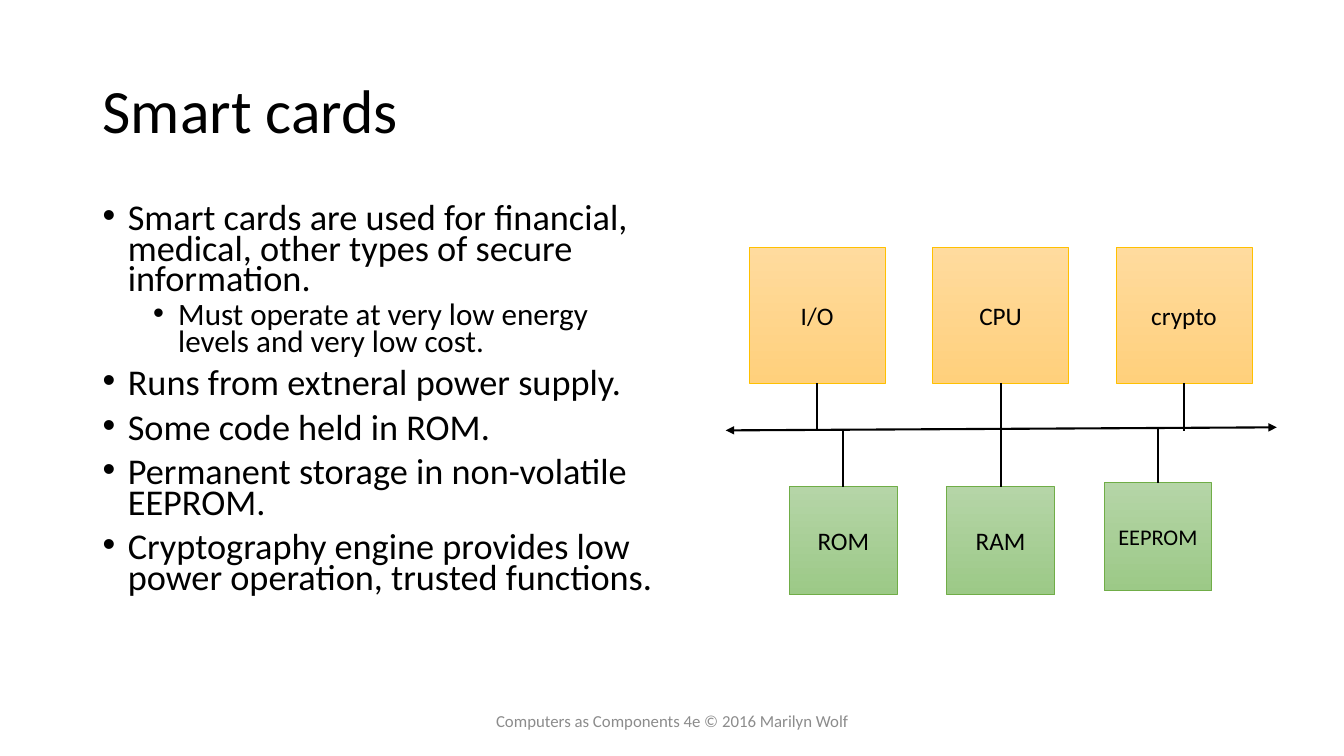
from dataclasses import dataclass

from lxml import etree
from pptx import Presentation
from pptx import util as u
from pptx.dml.color import RGBColor
from pptx.enum import shapes, text
from pptx.oxml.ns import qn


@dataclass(frozen=True)
class Theme:
    font: str = "Calibri"
    ink: str = "000000"
    grey: str = "8C8C8C"
    gold: tuple = ("FFDB9E", "FFD07C", "FFC000")  # top, bottom, edge
    green: tuple = ("B5D5A7", "9CC987", "70AD47")
    title: float = 44
    main: float = 25.9
    sub: float = 22.2
    label: float = 18
    small: float = 16
    foot: float = 12
    edge: float = 0.5
    wire: float = 1.5


@dataclass(frozen=True)
class Point:
    words: str
    level: int = 0


@dataclass(frozen=True)
class Block:
    name: str
    size: float = Theme.label
    lift: float = 0  # raises the block and its tap


@dataclass(frozen=True)
class Row:
    blocks: tuple
    tint: tuple
    top: float
    step: float
    width: float
    height: float


THEME = Theme()
WIDE, HIGH = u.Inches(13.33), u.Inches(7.5)

POINTS = (
    Point("Smart cards are used for financial, medical, other types of secure information."),
    Point("Must operate at very low energy levels and very low cost.", 1),
    Point("Runs from extneral power supply."),
    Point("Some code held in ROM."),
    Point("Permanent storage in non-volatile EEPROM."),
    Point("Cryptography engine provides low power operation, trusted functions."),
)

# All lengths are percent of the slide's width or height
MID = 74.45
BUS = 57.07
ROWS = (
    Row((Block("I/O"), Block("CPU"), Block("crypto")),
        THEME.gold, 32.67, 13.65, 10.13, 18),
    Row((Block("ROM"), Block("RAM"), Block("EEPROM", THEME.small, 0.53)),
        THEME.green, 64.4, 11.7, 8.03, 14.27),
)


def across(share: float) -> int:
    return round(WIDE * share / 100)


def down(share: float) -> int:
    return round(HIGH * share / 100)


def place(left: float, top: float, width: float, height: float) -> tuple:
    return across(left), down(top), across(width), down(height)


def write(frame, words: str, *, size: float, color: str = THEME.ink,
          align=text.PP_ALIGN.LEFT, anchor=text.MSO_ANCHOR.MIDDLE,
          lines: float = 1, before: float = 0, first: bool = True):
    """Add one paragraph to a text frame."""
    frame.word_wrap = True
    frame.vertical_anchor = anchor
    para = frame.paragraphs[0] if first else frame.add_paragraph()
    para.alignment = align
    para.line_spacing = lines
    para.space_before = u.Pt(before)
    run = para.add_run()
    run.text = words
    run.font.name = THEME.font
    run.font.size = u.Pt(size)
    run.font.color.rgb = RGBColor.from_string(color)
    return para


def bullet(para, level: int) -> None:
    para.level = level
    props = para._p.get_or_add_pPr()
    props.set("marL", str(u.Inches(0.25 + 0.5 * level)))
    props.set("indent", str(u.Inches(-0.25)))
    etree.SubElement(props, qn("a:buFont")).set("typeface", "Arial")
    etree.SubElement(props, qn("a:buChar")).set("char", "•")


def wire(slide, start: tuple, end: tuple, arrows: bool = False) -> None:
    line = slide.shapes.add_connector(
        shapes.MSO_CONNECTOR.STRAIGHT,
        across(start[0]), down(start[1]), across(end[0]), down(end[1]))
    line.line.color.rgb = RGBColor.from_string(THEME.ink)
    line.line.width = u.Pt(THEME.wire)
    if arrows:
        for tag in ("a:headEnd", "a:tailEnd"):
            etree.SubElement(line.line._ln, qn(tag)).set("type", "triangle")
    etree.SubElement(line._element.spPr, qn("a:effectLst"))


def box(slide, block: Block, row: Row, mid: float) -> None:
    shape = slide.shapes.add_shape(
        shapes.MSO_SHAPE.RECTANGLE,
        *place(mid - row.width / 2, row.top - block.lift, row.width, row.height))
    shape.shadow.inherit = False
    shape.fill.gradient()
    shape.fill.gradient_angle = 270
    for stop, shade in zip(shape.fill.gradient_stops, row.tint):
        stop.color.rgb = RGBColor.from_string(shade)
    shape.line.color.rgb = RGBColor.from_string(row.tint[-1])
    shape.line.width = u.Pt(THEME.edge)
    write(shape.text_frame, block.name, size=block.size,
          align=text.PP_ALIGN.CENTER)


def draw(slide, row: Row) -> None:
    """Draw a row of blocks, each with a tap to the bus."""
    for spot, block in enumerate(row.blocks, start=-1):
        mid = MID + spot * row.step
        box(slide, block, row, mid)
        near = row.top + (row.height if row.top < BUS else 0)
        wire(slide, (mid, near - block.lift), (mid, BUS - block.lift))


def main() -> None:
    deck = Presentation()
    deck.slide_width, deck.slide_height = WIDE, HIGH
    slide = deck.slides.add_slide(deck.slide_layouts[6])

    # Title
    title = slide.shapes.add_textbox(*place(6.9, 5.33, 86.25, 19.33))
    write(title.text_frame, "Smart cards", size=THEME.title, lines=0.9)

    # Bullet list
    body = slide.shapes.add_textbox(*place(6.9, 26.67, 42.53, 63.47))
    for index, point in enumerate(POINTS):
        para = write(body.text_frame, point.words,
                     size=THEME.sub if point.level else THEME.main,
                     anchor=text.MSO_ANCHOR.TOP, lines=0.7,
                     before=5 if point.level else 10, first=index == 0)
        bullet(para, point.level)

    # Block diagram around the bus
    for row in ROWS:
        draw(slide, row)
    wire(slide, (54, 56.93), (95, 56.53), arrows=True)

    # Footer
    foot = slide.shapes.add_textbox(*place(33.15, 92.67, 33.75, 5.33))
    write(foot.text_frame, "Computers as Components 4e © 2016 Marilyn Wolf",
          size=THEME.foot, color=THEME.grey, align=text.PP_ALIGN.CENTER)

    deck.save("out.pptx")


if __name__ == "__main__":
    main()
